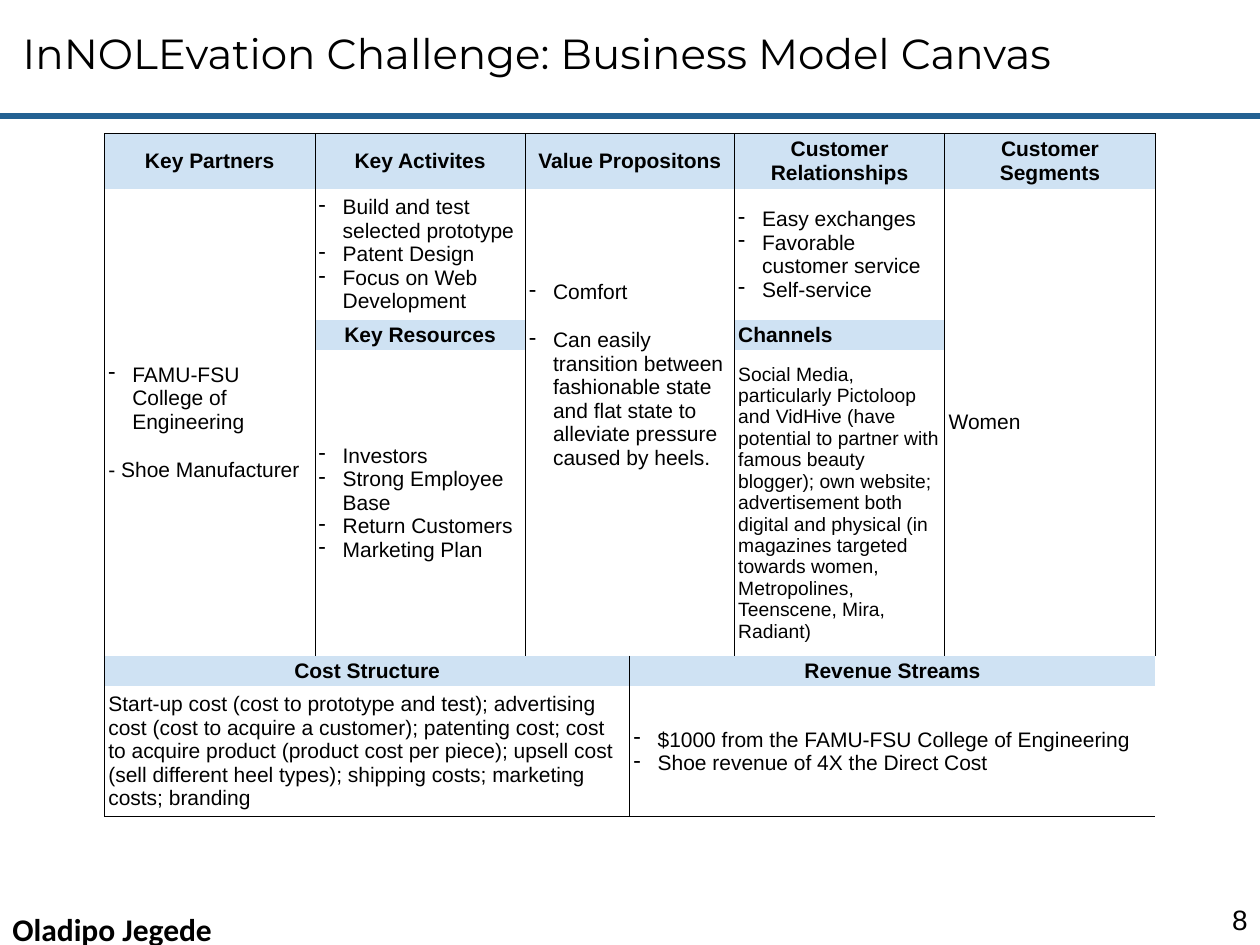
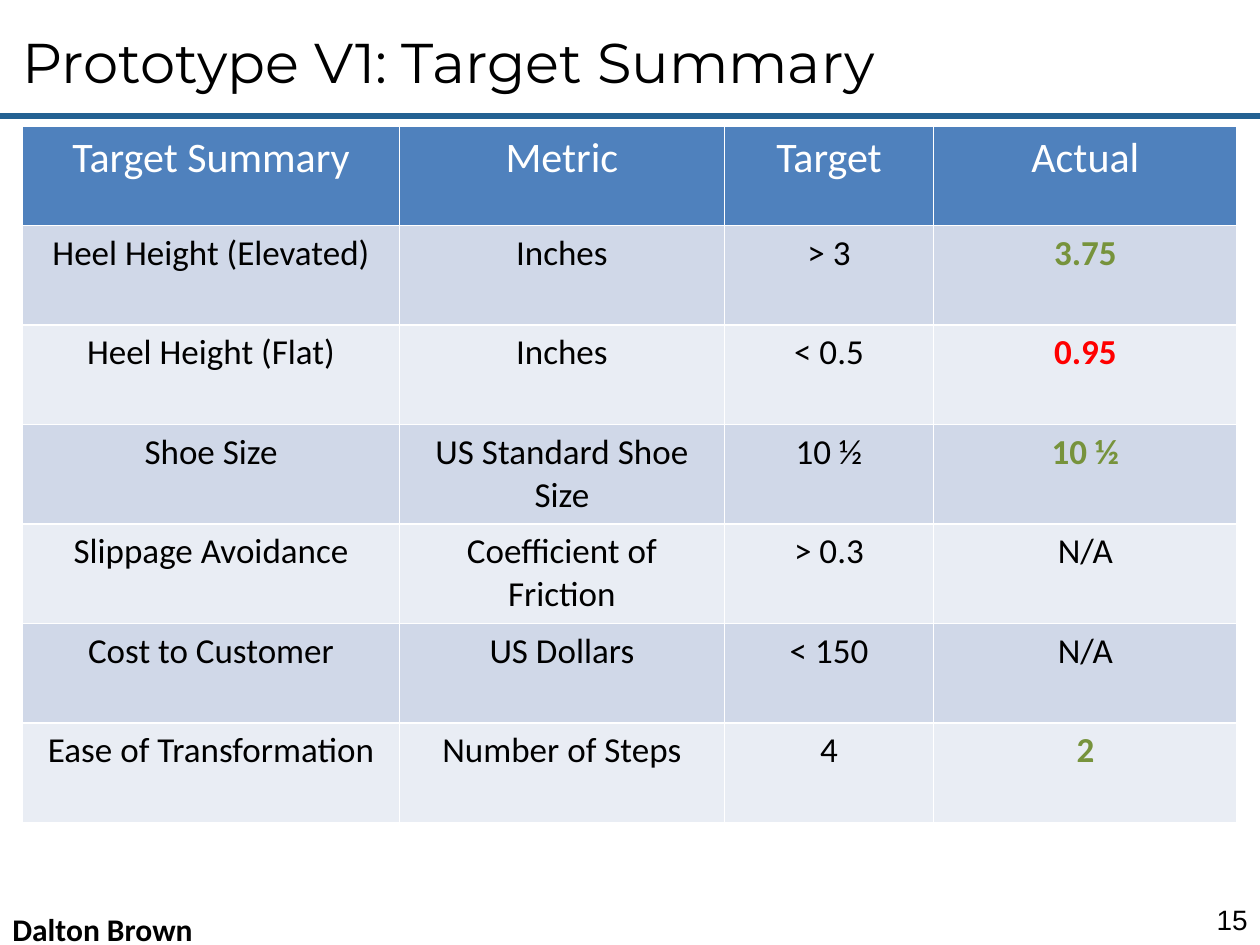
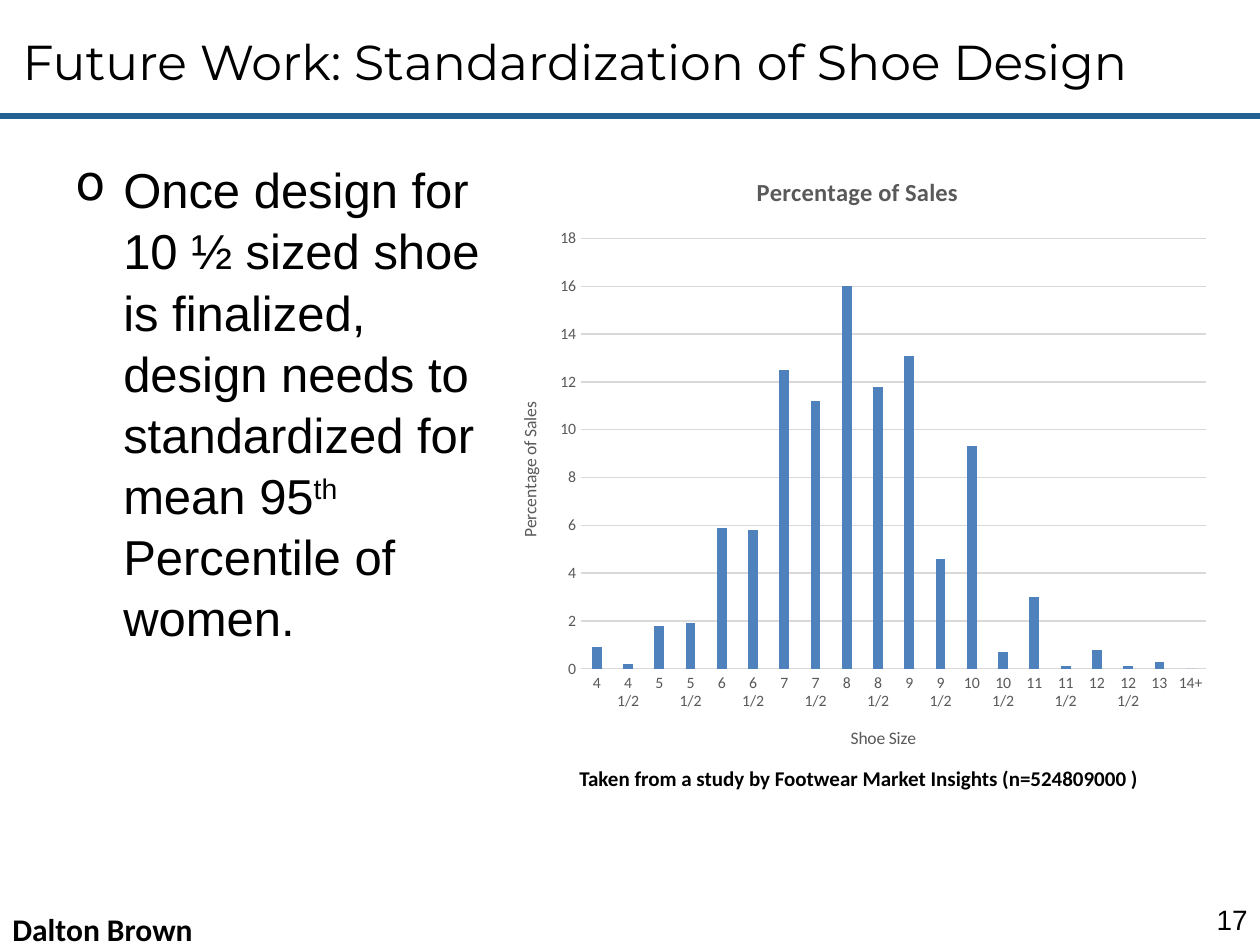
from pptx import Presentation
from pptx.chart.data import CategoryChartData as ChartData
from pptx.dml.color import RGBColor as Rgb
from pptx.enum.chart import XL_CHART_TYPE as Kind, XL_TICK_MARK as Tick
from pptx.enum.shapes import MSO_CONNECTOR as Line
from pptx.enum.text import MSO_ANCHOR as Anchor, MSO_AUTO_SIZE as Fit, PP_ALIGN as Align
from pptx.oxml import parse_xml
from pptx.oxml.ns import nsdecls, qn
from pptx.util import Inches, Pt
from lxml.etree import SubElement as Sub

COLORS = {
    "ink": "000000", "rule": "236192", "white": "FFFFFF",
    "pale": "CFE2F3", "blue": "4F81BD", "odd": "D0D8E8", "even": "E9EDF4",
    "good": "77933C", "bad": "FF0000", "gray": "595959", "grid": "D9D9D9",
}
NO_STYLE = "{2D5ABB26-0587-4C30-8999-92F81FD0307C}"


def color(name):
    return Rgb.from_string(COLORS[name])


def style(font, size, face="Calibri", ink="ink", bold=False):
    font.size, font.name, font.bold = Pt(size), face, bold
    font.color.rgb = color(ink)


def write(frame, text, align=Align.LEFT, mark="-", indent=0.19, gap=0, lead=None, **look):
    """Fill a frame: "* " starts a bullet, and ^ encloses a superscript."""
    for i, line in enumerate(text.split("\n")):
        para = frame.paragraphs[0] if i == 0 else frame.add_paragraph()
        props = para._p.get_or_add_pPr()
        if line.startswith("* "):
            line = line[2:]
            props.set("marL", str(Inches(indent)))
            props.set("indent", str(-Inches(indent)))
            Sub(props, qn("a:buChar")).set("char", mark)
        para.alignment = align
        if lead:
            para.line_spacing = lead
        if i and gap:
            para.space_before = Pt(gap)
        for j, part in enumerate(line.split("^")):
            run = para.add_run()
            run.text = part
            style(run.font, **look)
            if j % 2:
                run._r.get_or_add_rPr().set("baseline", "30000")


def border(cell, edges, ink, width):
    """Draw the named edges and clear the others."""
    props = cell._tc.get_or_add_tcPr()
    for edge in "LRTB":
        line = Sub(props, qn(f"a:ln{edge}"), w=str(Pt(width)))
        if edge in edges:
            fill = Sub(line, qn("a:solidFill"))
            Sub(fill, qn("a:srgbClr"), val=COLORS[ink])
        else:
            Sub(line, qn("a:noFill"))


class Deck:
    def __init__(self):
        self.prs = Presentation()
        self.prs.slide_width, self.prs.slide_height = Inches(10), Inches(7.5)
        self.slide = None

    def start(self, title, size, number, speaker, top=0.17):
        """Add a slide with its title, rule, number and speaker."""
        self.slide = self.prs.slides.add_slide(self.prs.slide_layouts[5])
        head = self.slide.shapes.title
        head.left, head.top = Inches(0.08), Inches(top)
        head.width, head.height = Inches(9.92), Inches(0.64)
        frame = head.text_frame
        frame.auto_size, frame.vertical_anchor = Fit.NONE, Anchor.TOP
        write(frame, title, size=size, face="Montserrat")
        self.rule(0.92)
        self.text(9.5, 7.1, 0.5, 0.4, number, anchor=Anchor.MIDDLE,
                  align=Align.RIGHT, size=16, face="Arial")
        self.text(0, 7.17, 2.33, 0.4, speaker, size=18, bold=True)

    def rule(self, y):
        line = self.slide.shapes.add_connector(
            Line.STRAIGHT, 0, Inches(y), Inches(10), Inches(y))
        line.line.color.rgb, line.line.width = color("rule"), Pt(3.5)
        Sub(line._element.spPr, qn("a:effectLst"))

    def text(self, x, y, w, h, text, anchor=Anchor.TOP, **look):
        box = self.slide.shapes.add_textbox(Inches(x), Inches(y), Inches(w), Inches(h))
        box.text_frame.word_wrap = True
        box.text_frame.vertical_anchor = anchor
        write(box.text_frame, text, **look)

    def table(self, x, y, cols, rows):
        table = self.slide.shapes.add_table(
            len(rows), len(cols), Inches(x), Inches(y),
            Inches(sum(cols)), Inches(sum(rows))).table
        table._tbl.tblPr[0].text = NO_STYLE
        table.first_row = table.horz_banding = False
        for col, w in zip(table.columns, cols):
            col.width = Inches(w)
        for row, h in zip(table.rows, rows):
            row.height = Inches(h)
        return table

    def cell(self, cell, text, fill=None, **look):
        if fill:
            cell.fill.solid()
            cell.fill.fore_color.rgb = color(fill)
        else:
            cell.fill.background()
        write(cell.text_frame, text, **look)

    def bars(self, x, y, w, h, title, cats, vals, names, plot):
        data = ChartData()
        data.categories = cats
        data.add_series("Series 1", vals)
        chart = self.slide.shapes.add_chart(
            Kind.COLUMN_CLUSTERED, Inches(x), Inches(y), Inches(w), Inches(h), data).chart
        style(chart.font, 10)
        chart.has_legend = False
        chart.has_title = True
        write(chart.chart_title.text_frame, title, Align.CENTER,
              size=14, ink="gray", bold=True)
        group = chart.plots[0]
        group.gap_width, group.overlap, group.vary_by_categories = 219, -27, False
        fill = group.series[0].format.fill
        fill.solid()
        fill.fore_color.rgb = color("blue")
        # Axes
        cat, val = chart.category_axis, chart.value_axis
        for axis, name in zip((cat, val), names):
            axis.has_title = True
            write(axis.axis_title.text_frame, name, Align.CENTER, size=10, ink="gray")
            axis.major_tick_mark = axis.minor_tick_mark = Tick.NONE
            style(axis.tick_labels.font, 9, ink="gray")
        val.minimum_scale, val.maximum_scale, val.major_unit = 0, 18, 2
        val.format.line.fill.background()
        val.has_major_gridlines = True
        for line in (cat.format.line, val.major_gridlines.format.line):
            line.color.rgb, line.width = color("grid"), Pt(0.75)
        # Plot area
        area = chart._chartSpace.chart.plotArea
        for old in area.findall(qn("c:layout")):
            area.remove(old)
        sizes = "".join(f'<c:{k} val="{v}"/>' for k, v in zip("xywh", plot))
        area.insert(0, parse_xml(
            f'<c:layout {nsdecls("c")}><c:manualLayout><c:layoutTarget val="inner"/>'
            f'<c:xMode val="edge"/><c:yMode val="edge"/>{sizes}'
            '</c:manualLayout></c:layout>'))


def canvas(deck):
    deck.start("InNOLEvation Challenge: Business Model Canvas", 24, "8", "Oladipo Jegede")
    wide, half = 1.67, 0.83
    table = deck.table(0.83, 1.06, [wide, wide, half, half, wide, wide],
                       [0.43, 1.03, 0.24, 2.41, 0.24, 1.03])
    # Headings: row, column, columns spanned, text
    heads = [
        (0, 0, 1, "Key Partners"), (0, 1, 1, "Key Activites"),
        (0, 2, 2, "Value Propositons"), (0, 4, 1, "Customer Relationships"),
        (0, 5, 1, "Customer Segments"), (2, 1, 1, "Key Resources"),
        (2, 4, 1, "Channels"), (4, 0, 3, "Cost Structure"), (4, 3, 3, "Revenue Streams"),
    ]
    # Entries: row, column, rows and columns spanned, text, format
    notes = [
        (1, 0, 3, 1, "* FAMU-FSU College of Engineering\n- Shoe Manufacturer", {"gap": 14}),
        (1, 1, 1, 1, "* Build and test selected prototype\n* Patent Design\n"
         "* Focus on Web Development", {}),
        (1, 2, 3, 2, "* Comfort\n* Can easily transition between fashionable state and "
         "flat state to alleviate pressure caused by heels.", {"gap": 14}),
        (1, 4, 1, 1, "* Easy exchanges\n* Favorable customer service\n* Self-service", {}),
        (1, 5, 3, 1, "Women", {}),
        (3, 1, 1, 1, "* Investors\n* Strong Employee Base\n* Return Customers\n"
         "* Marketing Plan", {}),
        (3, 4, 1, 1, "Social Media, particularly Pictoloop and VidHive (have potential to "
         "partner with famous beauty blogger); own website; advertisement both digital and "
         "physical (in magazines targeted towards women, Metropolines, Teenscene, Mira, "
         "Radiant)", {"size": 11}),
        (5, 0, 1, 3, "Start-up cost (cost to prototype and test); advertising cost (cost to "
         "acquire a customer); patenting cost; cost to acquire product (product cost per "
         "piece); upsell cost (sell different heel types); shipping costs; marketing costs; "
         "branding", {}),
        (5, 3, 1, 3, "* $1000 from the FAMU-FSU College of Engineering\n"
         "* Shoe revenue of 4X the Direct Cost", {}),
    ]
    bold = {"fill": "pale", "bold": True}
    parts = [(r, c, 1, span, text,
              bold | {"align": Align.LEFT if text == "Channels" else Align.CENTER})
             for r, c, span, text in heads] + notes
    for r, c, down, across, text, look in parts:
        first, last = table.cell(r, c), table.cell(r + down - 1, c + across - 1)
        if first is not last and down * across > 1:
            first.merge(last)
        for i in range(r, r + down):
            for j in range(c, c + across):
                edges = ("L" if j == c else "") + ("R" if j == c + across - 1 else "")
                edges += ("T" if i == 0 else "") + ("B" if i == 5 else "")
                border(table.cell(i, j), edges, "ink", 0.6)
        first.vertical_anchor = Anchor.MIDDLE
        first.margin_left = first.margin_right = Inches(0.03)
        first.margin_top = first.margin_bottom = Inches(0.02)
        deck.cell(first, text, **({"size": 12, "face": "Arial"} | look))
    # The value propositions sit above the middle
    table.cell(1, 2).margin_bottom = Inches(0.77)


def targets(deck):
    deck.start("Prototype V1: Target Summary", 32, "15", "Dalton Brown")
    rows = [
        ("Target Summary", "Metric", "Target", "Actual"),
        ("Heel Height (Elevated)", "Inches", "> 3", "3.75"),
        ("Heel Height (Flat)", "Inches", "< 0.5", "0.95"),
        ("Shoe Size", "US Standard Shoe Size", "10 ½", "10 ½"),
        ("Slippage Avoidance", "Coefficient of Friction", "> 0.3", "N/A"),
        ("Cost to Customer", "US Dollars", "< 150", "N/A"),
        ("Ease of Transformation", "Number of Steps", "4", "2"),
    ]
    marks = {1: "good", 2: "bad", 3: "good", 6: "good"}
    table = deck.table(0.18, 1, [2.99, 2.58, 1.66, 2.41], [0.79] * len(rows))
    for r, row in enumerate(rows):
        for c, text in enumerate(row):
            if r == 0:
                look = {"fill": "blue", "size": 24, "ink": "white"}
            else:
                look = {"fill": "odd" if r % 2 else "even", "size": 20}
                if c == 3 and r in marks:
                    look |= {"ink": marks[r], "bold": True}
            cell = table.cell(r, c)
            border(cell, "LRTB", "white", 1)
            deck.cell(cell, text, align=Align.CENTER, **look)


def future(deck):
    deck.start("Future Work: Standardization of Shoe Design", 28, "17", "Dalton Brown", top=0.2)
    deck.text(0.5, 1.2, 3.58, 5.17,
              "* Once design for 10 ½ sized shoe is finalized, design needs to "
              "standardized for mean 95^th^ Percentile of women.",
              mark="o", indent=0.38, lead=1.04, size=28, face="Arial")
    sizes = [f"{n}{half}" for n in range(4, 13) for half in ("", " 1/2")] + ["13", "14+"]
    sales = [0.9, 0.2, 1.8, 1.9, 5.9, 5.8, 12.5, 11.2, 16, 11.8,
             13.1, 4.6, 9.3, 0.7, 3, 0.1, 0.8, 0.1, 0.3, 0]
    deck.bars(3.92, 1.2, 5.77, 4.95, "Percentage of Sales", sizes, sales,
              ("Shoe Size", "Percentage of Sales"), (0.12, 0.14, 0.86, 0.69))
    deck.text(4.5, 6.03, 5.5, 0.3,
              "Taken from a study by Footwear Market Insights (n=524809000 )",
              size=12, bold=True)


def main():
    deck = Deck()
    for build in (canvas, targets, future):
        build(deck)
    deck.prs.save("out.pptx")


if __name__ == "__main__":
    main()
